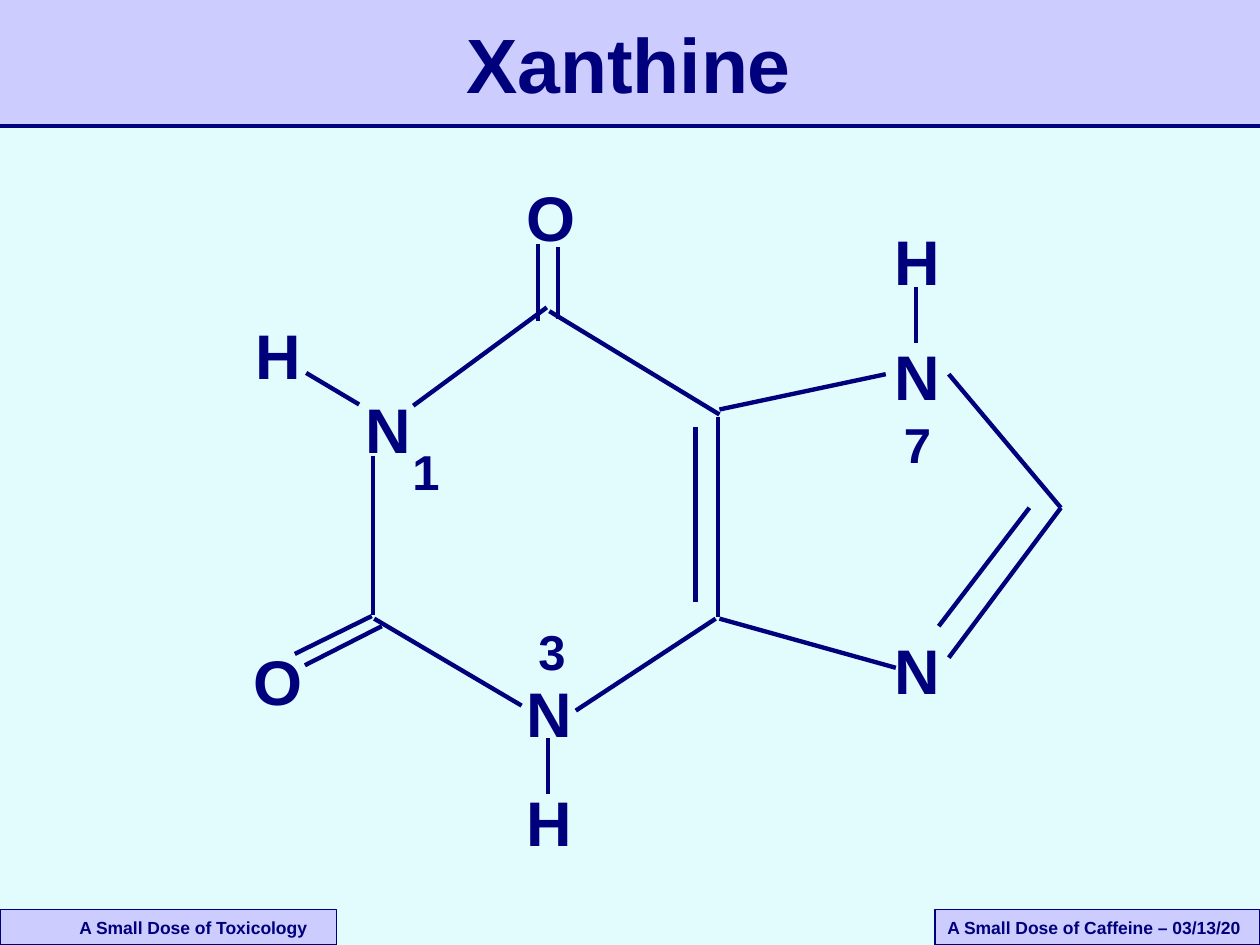
from dataclasses import dataclass

import pptx
import pptx.dml.color
import pptx.enum.shapes
import pptx.enum.text
import pptx.oxml.ns
import pptx.util
from lxml import etree
from pptx.util import Inches


@dataclass(frozen=True)
class Theme:
    ink: str = "00007D"
    band: str = "CCCCFF"
    paper: str = "E2FCFE"
    font: str = "Arial"
    title: int = 44
    atom: int = 36
    position: int = 28
    footer: int = 10
    rule: float = 2
    bond: float = 2.5
    border: float = 0.75


THEME = Theme()
ATOM_SIZE = (0.6, 0.7)
POSITION_SIZE = (0.41, 0.56)

ATOMS = [
    ("N", 3.08, 2.4),
    ("N", 4.36, 4.65),
    ("N", 7.28, 1.98),
    ("N", 7.28, 4.31),
    ("H", 2.21, 1.81),
    ("H", 4.36, 5.52),
    ("H", 7.28, 1.07),
    ("O", 2.21, 4.4),
    ("O", 4.37, 0.72),
]
POSITIONS = [("1", 3.38, 2.74), ("3", 4.38, 4.17), ("7", 7.28, 2.52)]

SIX_RING_BONDS = [
    (3.28, 2.22, 4.34, 1.44),
    (4.36, 1.47, 5.71, 2.29),
    (5.7, 2.31, 5.7, 3.9),
    (5.52, 2.39, 5.52, 3.78),
    (5.68, 3.91, 4.57, 4.64),
    (4.14, 4.6, 2.97, 3.91),
    (2.96, 3.88, 2.96, 2.62),
]
FIVE_RING_BONDS = [
    (5.71, 2.25, 7.03, 1.97),
    (7.53, 1.97, 8.42, 3.03),
    (8.42, 3.03, 7.53, 4.22),
    (8.17, 3.03, 7.45, 3.97),
    (7.11, 4.3, 5.71, 3.91),
]
SIDE_BONDS = [
    (2.85, 2.21, 2.43, 1.96),
    (4.35, 5.3, 4.35, 4.86),
    (7.27, 1.72, 7.27, 1.28),
    (2.95, 3.89, 2.34, 4.19),
    (3.03, 3.97, 2.42, 4.28),
    (4.27, 1.55, 4.27, 0.94),
    (4.43, 1.53, 4.43, 0.96),
]


def rgb(value):
    return pptx.dml.color.RGBColor.from_string(value)


def write(shape, text, size, align):
    frame = shape.text_frame
    frame.text = text
    frame.vertical_anchor = pptx.enum.text.MSO_ANCHOR.MIDDLE
    paragraph = frame.paragraphs[0]
    paragraph.alignment = align
    paragraph.font.name = THEME.font
    paragraph.font.size = pptx.util.Pt(size)
    paragraph.font.bold = True
    paragraph.font.color.rgb = rgb(THEME.ink)


def add_panel(slide, box):
    panel = slide.shapes.add_shape(
        pptx.enum.shapes.MSO_SHAPE.RECTANGLE, *map(Inches, box))
    panel.shadow.inherit = False
    panel.fill.solid()
    panel.fill.fore_color.rgb = rgb(THEME.band)
    return panel


def add_line(slide, ends, width):
    line = slide.shapes.add_connector(
        pptx.enum.shapes.MSO_CONNECTOR.STRAIGHT, *map(Inches, ends))
    line.line.color.rgb = rgb(THEME.ink)
    line.line.width = pptx.util.Pt(width)
    etree.SubElement(line.element.spPr, pptx.oxml.ns.qn("a:effectLst"))


def add_symbol(slide, text, center_x, center_y, box_size, size):
    width, height = box_size
    symbol = slide.shapes.add_textbox(
        Inches(center_x - width / 2), Inches(center_y - height / 2),
        Inches(width), Inches(height))
    symbol.text_frame.word_wrap = False
    write(symbol, text, size, pptx.enum.text.PP_ALIGN.CENTER)


def add_header(slide, box, text):
    left, top, width, height = box
    band = add_panel(slide, box)
    band.line.fill.background()
    add_line(slide, (left, top + height, left + width, top + height), THEME.rule)

    title = slide.shapes.title
    title.left, title.top = Inches(left + 0.39), Inches(top + 0.08)
    title.width, title.height = Inches(width - 0.8), Inches(height - 0.17)
    write(title, text, THEME.title, pptx.enum.text.PP_ALIGN.CENTER)
    title.element.getparent().append(title.element)


def add_footer(slide, box, text, inset):
    footer = add_panel(slide, box)
    footer.line.color.rgb = rgb(THEME.ink)
    footer.line.width = pptx.util.Pt(THEME.border)
    footer.text_frame.word_wrap = False
    footer.text_frame.margin_left = Inches(inset)
    write(footer, text, THEME.footer, pptx.enum.text.PP_ALIGN.LEFT)


def add_molecule(slide, box):
    left, top, _, _ = box
    for x1, y1, x2, y2 in SIX_RING_BONDS + FIVE_RING_BONDS + SIDE_BONDS:
        add_line(slide, (left + x1, top + y1, left + x2, top + y2), THEME.bond)
    for symbols, box_size, size in (
        (ATOMS, ATOM_SIZE, THEME.atom),
        (POSITIONS, POSITION_SIZE, THEME.position),
    ):
        for text, x, y in symbols:
            add_symbol(slide, text, left + x, top + y, box_size, size)


def main():
    presentation = pptx.Presentation()
    presentation.slide_width = Inches(10)
    presentation.slide_height = Inches(7.5)
    slide = presentation.slides.add_slide(presentation.slide_layouts[5])
    slide.background.fill.solid()
    slide.background.fill.fore_color.rgb = rgb(THEME.paper)

    add_header(slide, (0, 0, 10, 1), "Xanthine")
    add_footer(slide, (0, 7.22, 2.67, 0.28), "A Small Dose of Toxicology", 0.63)
    add_footer(slide, (7.42, 7.22, 2.58, 0.28),
               "A Small Dose of Caffeine – 03/13/20", 0.1)
    add_molecule(slide, (0, 1, 10, 6.22))
    presentation.save("out.pptx")


if __name__ == "__main__":
    main()
